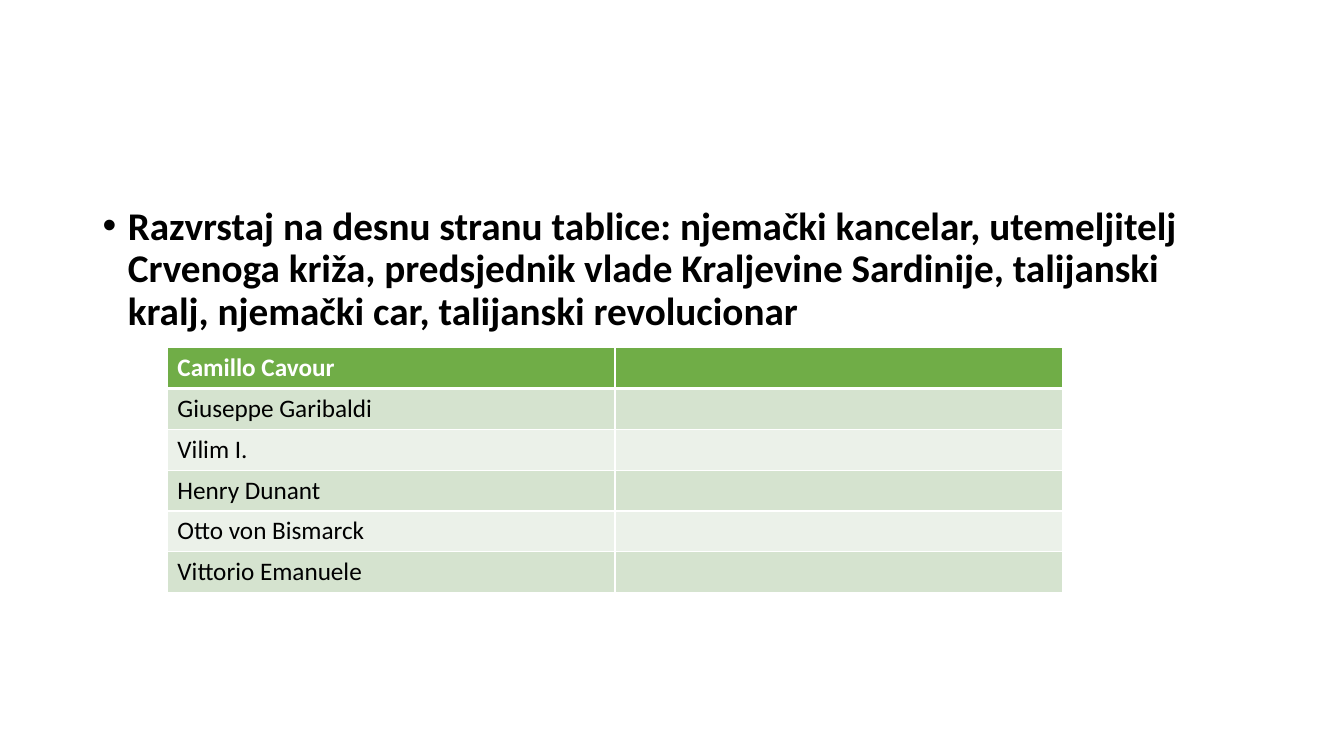
from dataclasses import dataclass

import pptx
import pptx.dml.color
import pptx.oxml
import pptx.oxml.ns
import pptx.slide
import pptx.table
import pptx.text.text
import pptx.util
from pptx.util import Inches

WHITE = pptx.dml.color.RGBColor(0xFF, 0xFF, 0xFF)
BLACK = pptx.dml.color.RGBColor(0x00, 0x00, 0x00)
GREEN = pptx.dml.color.RGBColor(0x70, 0xAD, 0x47)
DARK_BAND = pptx.dml.color.RGBColor(0xD5, 0xE3, 0xCF)
LIGHT_BAND = pptx.dml.color.RGBColor(0xEB, 0xF1, 0xE9)

FONT = "Calibri"
ROW_HEIGHT = 0.405
TASK = (
    "Razvrstaj na desnu stranu tablice: njemački kancelar, utemeljitelj "
    "Crvenoga križa, predsjednik vlade Kraljevine Sardinije, talijanski kralj, "
    "njemački car, talijanski revolucionar"
)
PEOPLE = [
    "Camillo Cavour",
    "Giuseppe Garibaldi",
    "Vilim I.",
    "Henry Dunant",
    "Otto von Bismarck",
    "Vittorio Emanuele",
]


@dataclass(frozen=True)
class RowStyle:
    fill: pptx.dml.color.RGBColor
    text: pptx.dml.color.RGBColor
    bold: bool = False
    top_border: float = 1
    bottom_border: float = 1


HEADER = RowStyle(GREEN, WHITE, bold=True, bottom_border=3)
BELOW_HEADER = RowStyle(DARK_BAND, BLACK, top_border=3)
BANDS = [RowStyle(LIGHT_BAND, BLACK), RowStyle(DARK_BAND, BLACK)]


def style_for_row(index: int) -> RowStyle:
    if index < 2:
        return (HEADER, BELOW_HEADER)[index]
    return BANDS[index % 2]


def format_paragraph(
    paragraph: pptx.text.text._Paragraph,
    size: float,
    color: pptx.dml.color.RGBColor,
    bold: bool,
) -> None:
    font = paragraph.font
    font.name, font.size, font.bold = FONT, pptx.util.Pt(size), bold
    font.color.rgb = color
    for run in paragraph.runs:
        run.font.name, run.font.size, run.font.bold = FONT, pptx.util.Pt(size), bold
        run.font.color.rgb = color


def add_border(cell: pptx.table._Cell, side: str, width: float) -> None:
    line = pptx.oxml.parse_xml(
        f'<a:{side} {pptx.oxml.ns.nsdecls("a")} w="{pptx.util.Pt(width)}">'
        f'<a:solidFill><a:srgbClr val="{WHITE}"/></a:solidFill></a:{side}>'
    )
    cell._tc.get_or_add_tcPr().append(line)


def style_cell(cell: pptx.table._Cell, text: str, style: RowStyle) -> None:
    cell.text_frame.text = text
    format_paragraph(cell.text_frame.paragraphs[0], 18, style.text, style.bold)
    # Borders come before the fill in the cell properties
    add_border(cell, "lnL", 1)
    add_border(cell, "lnR", 1)
    add_border(cell, "lnT", style.top_border)
    add_border(cell, "lnB", style.bottom_border)
    cell.fill.solid()
    cell.fill.fore_color.rgb = style.fill


def add_task(slide: pptx.slide.Slide) -> None:
    box = slide.shapes.add_textbox(Inches(0.92), Inches(2), Inches(11.5), Inches(4.76))
    text_frame = box.text_frame
    text_frame.word_wrap = True
    text_frame.text = TASK
    paragraph = text_frame.paragraphs[0]
    paragraph.line_spacing = 0.9
    properties = paragraph._p.get_or_add_pPr()
    properties.set("marL", str(Inches(0.25)))
    properties.set("indent", str(Inches(-0.25)))
    for element in ('buFont typeface="Arial"', 'buChar char="•"'):
        properties.append(
            pptx.oxml.parse_xml(f'<a:{element} {pptx.oxml.ns.nsdecls("a")}/>')
        )
    format_paragraph(paragraph, 28, BLACK, True)


def add_people_table(slide: pptx.slide.Slide) -> None:
    frame = slide.shapes.add_table(
        len(PEOPLE), 2, Inches(1.66), Inches(3.45),
        Inches(8.88), Inches(ROW_HEIGHT * len(PEOPLE)),
    )
    for index, person in enumerate(PEOPLE):
        name_cell, answer_cell = frame.table.rows[index].cells
        style_cell(name_cell, person, style_for_row(index))
        style_cell(answer_cell, "", style_for_row(index))


def main() -> None:
    presentation = pptx.Presentation()
    presentation.slide_width = Inches(13.33)
    presentation.slide_height = Inches(7.5)
    slide = presentation.slides.add_slide(presentation.slide_layouts[6])
    # Task above, matching table below
    add_task(slide)
    add_people_table(slide)
    presentation.save("out.pptx")


if __name__ == "__main__":
    main()
